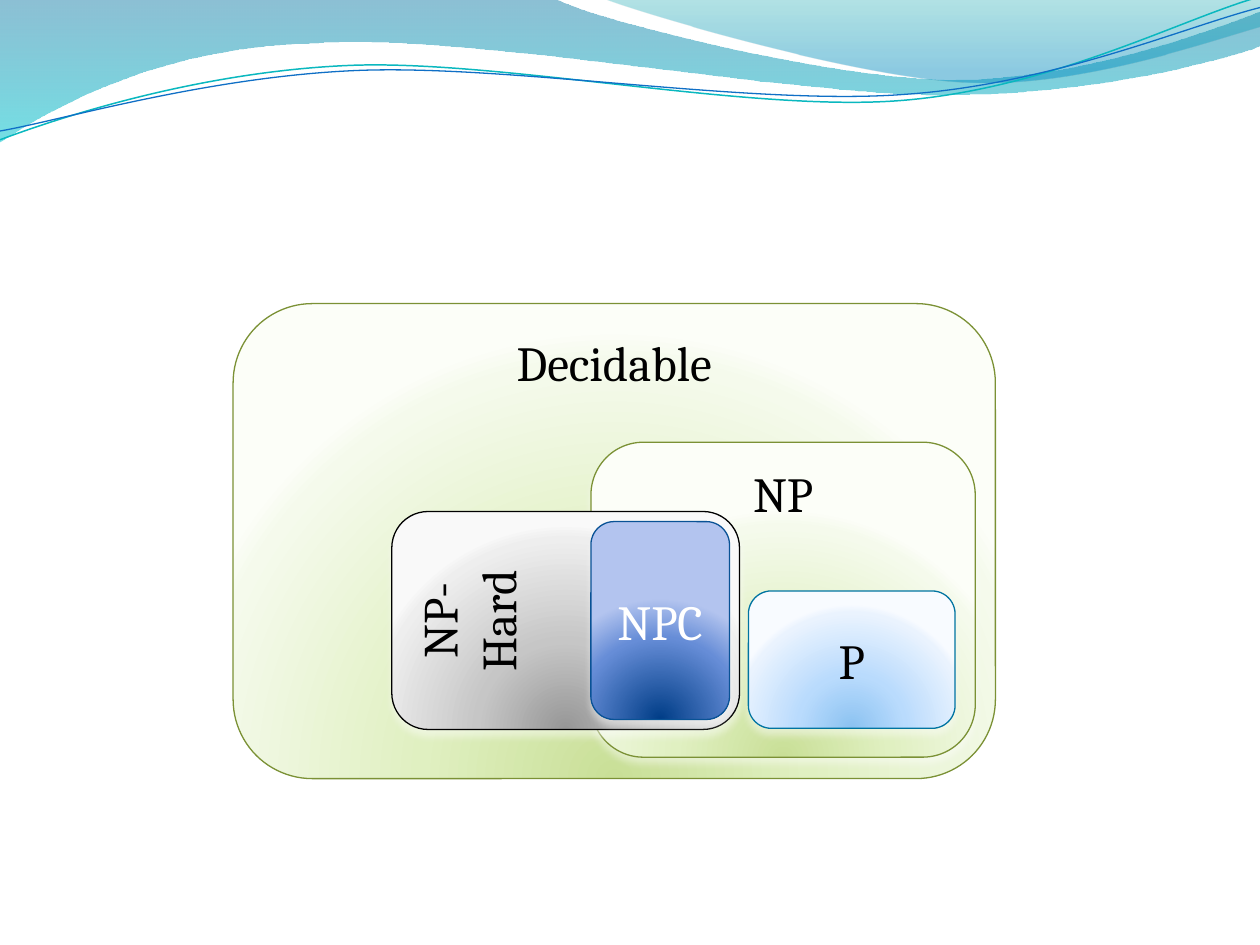
import dataclasses

import lxml.etree
import pptx
import pptx.dml.color
import pptx.enum.shapes
import pptx.enum.text
import pptx.oxml.ns
import pptx.util

Anchor = pptx.enum.text.MSO_ANCHOR


@dataclasses.dataclass(frozen=True)
class Palette:
    stops: tuple
    line: str
    text: str = "000000"


@dataclasses.dataclass(frozen=True)
class Theme:
    font: str = "Cambria"
    text_size: int = 28
    line_width: float = 0.75
    shadow: str = "FFFFFF"
    green: Palette = Palette(
        ((0, "C9DF97"), (43, "E0F0C1"), (93, "F5FAEC"), (100, "FCFEF8")), "7B9135")
    sky: Palette = Palette(
        ((0, "8BC2F1"), (43, "B9DBFD"), (93, "EAF3FE"), (100, "F8FBFF")), "0074A1")
    gray: Palette = Palette(
        ((0, "979797"), (43, "C6C6C6"), (93, "EEEEEE"), (100, "F9F9F9")), "000000")
    navy: Palette = Palette(
        ((0, "003D87"), (68, "668DD7"), (100, "B3C4EF")), "095295", "FFFFFF")
    wide_wave: tuple = ((0, "0074A1", 45), (100, "00C6CF", 55))
    corner_wave: tuple = ((0, "00A1A9", 30), (80, "008BBF", 45))
    teal_line: str = "0AB8BF"
    blue_line: str = "0F6FC6"


class SlideBuilder:
    """Draws themed elements on a slide grid of 100 columns by 75 rows."""

    def __init__(self, presentation, theme):
        self.theme = theme
        self.slide = presentation.slides.add_slide(presentation.slide_layouts[6])
        self.cell = presentation.slide_width / 100

    def units(self, *cells):
        return [round(value * self.cell) for value in cells]

    def color(self, value, alpha=100):
        opacity = f'<a:alpha val="{alpha * 1000}"/>' if alpha < 100 else ""
        return f'<a:srgbClr val="{value}">{opacity}</a:srgbClr>'

    def add_xml(self, parent, position, tag, attributes, body):
        namespace = pptx.oxml.ns.nsdecls("a")
        parent.insert(position, pptx.oxml.parse_xml(
            f"<a:{tag} {namespace} {attributes}>{body}</a:{tag}>"))

    def gradient(self, shape, stops, direction):
        body = "".join(
            f'<a:gs pos="{position * 1000}">{self.color(*color)}</a:gs>'
            for position, *color in stops)
        self.add_xml(shape._element.spPr, 2, "gradFill", 'rotWithShape="1"',
                     f"<a:gsLst>{body}</a:gsLst>{direction}")

    def outline(self, shape, color, width):
        shape.line.color.rgb = pptx.dml.color.RGBColor.from_string(color)
        shape.line.width = pptx.util.Pt(width)

    def curve(self, start, segments, closed):
        points = [self.units(*segment[i:i + 2])
                  for segment in segments for i in range(0, len(segment), 2)]
        builder = self.slide.shapes.build_freeform(*self.units(*start), scale=1.0)
        builder.add_line_segments(points, close=closed)
        shape = builder.convert_to_shape()
        shape.shadow.inherit = False
        name = pptx.oxml.ns.qn
        lines = iter(list(shape._element.spPr.iter(name("a:lnTo"))))
        for segment in segments:
            group = [next(lines) for _ in range(len(segment) // 2)]
            if len(group) == 3:
                bezier = lxml.etree.Element(name("a:cubicBezTo"))
                group[0].addprevious(bezier)
                for line in group:
                    bezier.append(line[0])
                    line.getparent().remove(line)
        return shape

    def wave_area(self, start, segments, stops):
        shape = self.curve(start, segments, True)
        self.gradient(shape, stops, '<a:lin ang="5400000" scaled="1"/>')
        shape.line.fill.background()

    def wave_line(self, start, segments, color, width):
        shape = self.curve(start, segments, False)
        shape.fill.background()
        self.outline(shape, color, width)

    def class_box(self, label, bounds, palette, anchor=Anchor.TOP, vertical=False):
        shape = self.slide.shapes.add_shape(
            pptx.enum.shapes.MSO_SHAPE.ROUNDED_RECTANGLE, *self.units(*bounds))
        self.gradient(shape, palette.stops,
                      '<a:path path="circle">'
                      '<a:fillToRect l="50000" t="130000" r="50000" b="-30000"/></a:path>')
        self.outline(shape, palette.line, self.theme.line_width)
        shape.shadow.inherit = False
        effects = shape._element.spPr.find(pptx.oxml.ns.qn("a:effectLst"))
        self.add_xml(effects, 0, "outerShdw",
                     f'blurRad="{pptx.util.Pt(4.5)}" dist="{pptx.util.Pt(3)}" '
                     'dir="5400000" algn="ctr" rotWithShape="0"',
                     self.color(self.theme.shadow, 48))
        frame = shape.text_frame
        frame.word_wrap = True
        frame.vertical_anchor = anchor
        if vertical:
            frame._txBody.bodyPr.set("vert", "vert270")
        frame.text = label
        paragraph = frame.paragraphs[0]
        paragraph.alignment = pptx.enum.text.PP_ALIGN.CENTER
        paragraph.font.name = self.theme.font
        paragraph.font.size = pptx.util.Pt(self.theme.text_size)
        paragraph.font.color.rgb = pptx.dml.color.RGBColor.from_string(palette.text)


def main():
    presentation = pptx.Presentation()
    presentation.slide_width = pptx.util.Inches(10)
    presentation.slide_height = pptx.util.Inches(7.5)
    theme = Theme()
    builder = SlideBuilder(presentation, theme)

    builder.wave_area((0, 0), [
        (44, -0.1), (47.6, 1.7, 66.4, 6.3, 75.8, 6.3), (85.3, 6.3, 95.8, 2.6, 100, 0.9),
        (100.1, 3.6), (98.3, 4.4, 87, 7.6, 74.6, 7.5), (62.2, 7.5, 38.2, 2.8, 25.7, 3.4),
        (12.9, 3.6, 4.6, 8.3, -0.1, 11.3), (0, 0)], theme.wide_wave)
    builder.wave_area((47.9, -0.1), [
        (50.9, 1.1, 68.2, 6.2, 76.9, 6.5), (85.6, 6.9, 96.1, 3.2, 100, 2.1),
        (100, 0), (47.9, -0.1)], theme.corner_wave)
    builder.wave_line((0, 11.1), [
        (4.8, 9.3, 15.8, 5.7, 27.7, 5.2), (39.5, 4.7, 59.3, 8.9, 71.3, 8),
        (83.3, 7.1, 93.8, 1.5, 99.8, -0.2)], theme.teal_line, 0.85)
    builder.wave_line((0, 10.4), [
        (4.7, 9.6, 16.4, 6.1, 28.3, 5.6), (40.3, 5.1, 59.7, 8.4, 71.7, 7.5),
        (83.6, 6.7, 94.1, 2.1, 100, 0.6)], theme.blue_line, theme.line_width)

    builder.class_box("Decidable", (18.5, 24.1, 60.5, 37.7), theme.green)
    builder.class_box("NP", (46.9, 35.1, 30.5, 25), theme.green)
    builder.class_box("P", (59.4, 46.9, 16.4, 10.9), theme.sky, Anchor.MIDDLE)
    builder.class_box("NP-Hard", (31.1, 40.6, 27.6, 17.3), theme.gray, vertical=True)
    builder.class_box("NPC", (46.9, 41.4, 11, 15.7), theme.navy, Anchor.MIDDLE)
    presentation.save("out.pptx")


if __name__ == "__main__":
    main()
